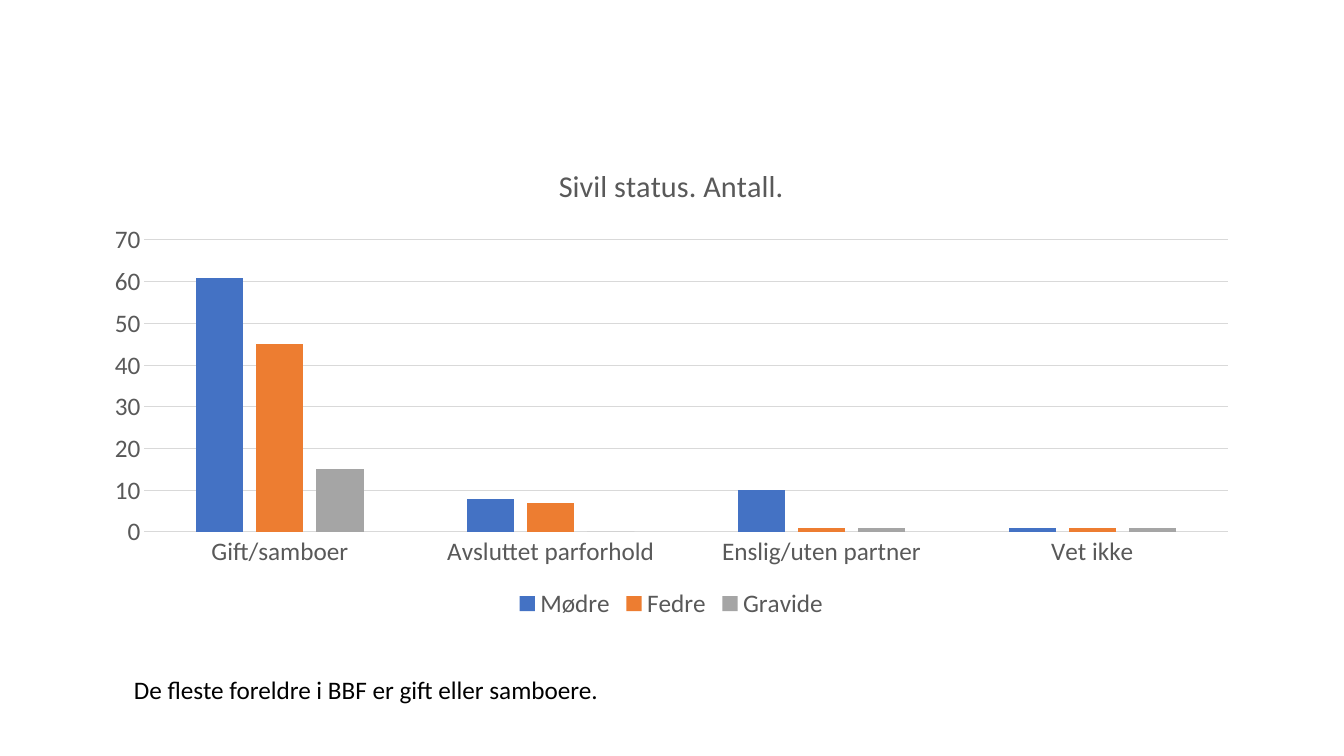
from pptx import Presentation
from pptx.chart.data import CategoryChartData
from pptx.dml.color import RGBColor
from pptx.enum.chart import XL_CHART_TYPE, XL_LEGEND_POSITION, XL_TICK_MARK
from pptx.enum.text import MSO_AUTO_SIZE
from pptx.util import Pt

CLUSTERED = XL_CHART_TYPE.COLUMN_CLUSTERED
BOTTOM = XL_LEGEND_POSITION.BOTTOM
NO_TICK = XL_TICK_MARK.NONE
FIT_SHAPE = MSO_AUTO_SIZE.SHAPE_TO_FIT_TEXT

THEME = {
    "font": "Calibri",
    "text_size": Pt(18),
    "title_size": Pt(21.6),
    "ink": RGBColor.from_string("000000"),
    "muted": RGBColor.from_string("595959"),
    "rule": RGBColor.from_string("D9D9D9"),
    "rule_width": Pt(0.75),
}
CATEGORIES = ["Gift/samboer", "Avsluttet parforhold", "Enslig/uten partner", "Vet ikke"]
PARENTS = [
    ("Mødre", (61, 8, 10, 1), "4472C4"),
    ("Fedre", (45, 7, 1, 1), "ED7D31"),
    ("Gravide", (15, 0, 1, 1), "A5A5A5"),
]


def style_font(font, color, size="text_size"):
    values = {"name": THEME["font"], "size": THEME[size], "bold": False}
    for name, value in values.items():
        setattr(font, name, value)
    font.color.rgb = THEME[color]


def style_rule(line):
    line.color.rgb = THEME["rule"]
    line.width = THEME["rule_width"]


deck = Presentation()
deck.slide_width, deck.slide_height = Pt(960), Pt(540)
page = deck.slides.add_slide(deck.slide_layouts[6])

status_data = CategoryChartData()
status_data.categories = CATEGORIES
for parent, counts, color in PARENTS:
    status_data.add_series(parent, counts)

chart = page.shapes.add_chart(
    CLUSTERED, Pt(65.5), Pt(103), Pt(828), Pt(342.7), status_data
).chart
style_font(chart.font, "ink")

chart.has_title = True
title_para = chart.chart_title.text_frame.paragraphs[0]
title_span = title_para.add_run()
title_span.text = "Sivil status. Antall."
style_font(title_span.font, "muted", "title_size")
chart.chart_title.include_in_layout = False

chart.has_legend = True
chart.legend.position = BOTTOM
chart.legend.include_in_layout = False
style_font(chart.legend.font, "muted")

for axis in (chart.category_axis, chart.value_axis):
    axis.major_tick_mark = NO_TICK
    axis.minor_tick_mark = NO_TICK
    style_font(axis.tick_labels.font, "muted")
style_rule(chart.category_axis.format.line)
chart.value_axis.format.line.fill.background()
style_rule(chart.value_axis.major_gridlines.format.line)
for name, value in {"minimum_scale": 0, "maximum_scale": 70, "major_unit": 10}.items():
    setattr(chart.value_axis, name, value)

plot = chart.plots[0]
for name, value in {"gap_width": 219, "overlap": -27, "vary_by_categories": False}.items():
    setattr(plot, name, value)
for series, (parent, counts, color) in zip(plot.series, PARENTS):
    series.format.fill.solid()
    series.format.fill.fore_color.rgb = RGBColor.from_string(color)
    series.invert_if_negative = False

box = page.shapes.add_textbox(Pt(88.6), Pt(478), Pt(350.6), Pt(29))
box.text_frame.word_wrap = False
box.text_frame.auto_size = FIT_SHAPE
span = box.text_frame.paragraphs[0].add_run()
span.text = "De fleste foreldre i BBF er gift eller samboere."
style_font(span.font, "ink")

deck.save("out.pptx")
